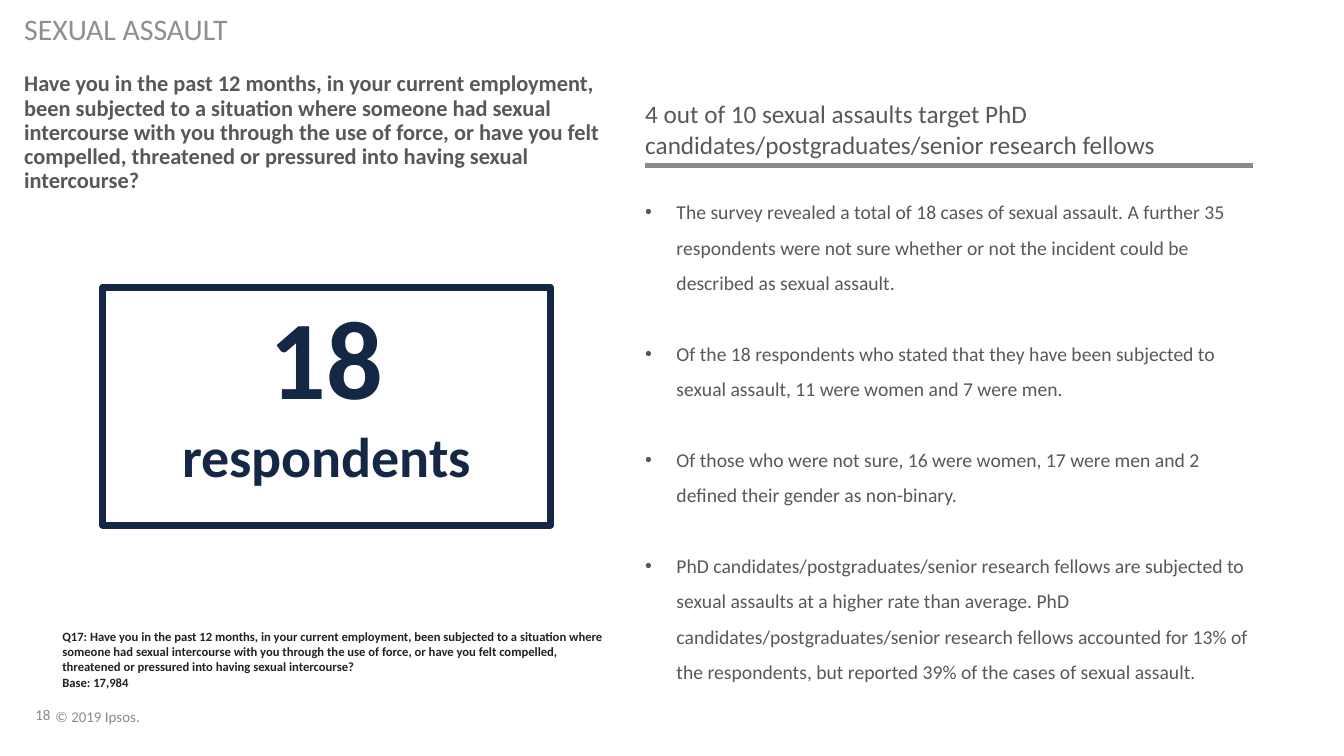
"""Build the survey slide on reported cases of sexual assault."""
from dataclasses import dataclass

import lxml.etree
import pptx
import pptx.dml.color
import pptx.enum.shapes
import pptx.enum.text
import pptx.oxml.ns
import pptx.util

Inches = pptx.util.Inches
Pt = pptx.util.Pt
ALIGN = pptx.enum.text.PP_ALIGN
ANCHOR = pptx.enum.text.MSO_ANCHOR
qn = pptx.oxml.ns.qn


@dataclass(frozen=True)
class Theme:
    """Font, colours and type sizes of the slide."""
    font: str = "Calibri"
    grey: str = "888B8D"
    section: str = "8F8F92"
    text: str = "58585B"
    note: str = "222223"
    navy: str = "142846"
    footer_pt: float = 10.7
    section_pt: float = 21.3
    question_pt: float = 16
    note_pt: float = 9
    heading_pt: float = 18
    bullet_pt: float = 14
    count_pt: float = 80
    unit_pt: float = 40
    rule_pt: float = 3.5
    frame_pt: float = 5


THEME = Theme()


@dataclass(frozen=True)
class Para:
    """One paragraph and its formatting."""
    text: str
    size: float
    color: str = THEME.text
    bold: bool = False
    spacing: float = 1.0
    before: float = 0
    align: ALIGN = ALIGN.LEFT
    bullet: bool = False


@dataclass(frozen=True)
class Block:
    """A text box with its place, in inches, and its paragraphs."""
    box: tuple[float, float, float, float]
    paras: list[Para]
    anchor: ANCHOR = ANCHOR.TOP
    inset: tuple[float, float] = (0, 0)


QUESTION = (
    "Have you in the past 12 months, in your current employment, been subjected "
    "to a situation where someone had sexual intercourse with you through the use "
    "of force, or have you felt compelled, threatened or pressured into having "
    "sexual intercourse?"
)
FINDINGS = [
    "The survey revealed a total of 18 cases of sexual assault. A further 35 "
    "respondents were not sure whether or not the incident could be described as "
    "sexual assault.",
    "Of the 18 respondents who stated that they have been subjected to sexual "
    "assault, 11 were women and 7 were men.",
    "Of those who were not sure, 16 were women, 17 were men and 2 defined their "
    "gender as non-binary.",
    "PhD candidates/postgraduates/senior research fellows are subjected to sexual "
    "assaults at a higher rate than average. PhD candidates/postgraduates/senior "
    "research fellows accounted for 13% of the respondents, but reported 39% of "
    "the cases of sexual assault.",
]
HEADING = (
    "4 out of 10 sexual assaults target PhD "
    "candidates/postgraduates/senior research fellows"
)
BLOCKS = [
    Block((0.35, 6.83, 0.45, 0.35),
          [Para("18", THEME.footer_pt, THEME.grey, spacing=0.85)], ANCHOR.BOTTOM),
    Block((0.55, 6.95, 1.01, 0.25),
          [Para("© 2019 Ipsos.", THEME.footer_pt, THEME.grey, spacing=0.85)],
          ANCHOR.BOTTOM),
    Block((0.24, 0.07, 9.81, 0.47),
          [Para("SEXUAL ASSAULT", THEME.section_pt, THEME.section, spacing=0.9)],
          ANCHOR.MIDDLE),
    Block((0.24, 0.72, 5.87, 0.97),
          [Para(QUESTION, THEME.question_pt, bold=True, spacing=0.9)]),
    Block((0.52, 6.19, 5.6, 0.71),
          [Para(t, THEME.note_pt, THEME.note, bold=True)
           for t in (f"Q17: {QUESTION}", "Base: 17,984")], inset=(0.1, 0.05)),
    Block((6.4, 1.87, 6.04, 4.32),
          [Para(t, THEME.bullet_pt, spacing=1.5, before=25.4 if i else 0, bullet=True)
           for i, t in enumerate(FINDINGS)]),
    Block((6.4, 0.98, 5.66, 0.79), [Para(HEADING, THEME.heading_pt)]),
]
COUNT = Block((1.02, 2.85, 4.44, 2.36), [
    Para(t, size, THEME.navy, bold=True, align=ALIGN.CENTER)
    for t, size in (("18", THEME.count_pt), ("respondents", THEME.unit_pt))
])


def rgb(color: str) -> pptx.dml.color.RGBColor:
    """Turn a hex string into a colour."""
    return pptx.dml.color.RGBColor.from_string(color)


def add_bullet(p) -> None:
    """Give a paragraph a round bullet with a hanging indent."""
    pPr = p._p.get_or_add_pPr()
    pPr.set("marL", str(Inches(0.31)))
    pPr.set("indent", str(-Inches(0.31)))
    lxml.etree.SubElement(pPr, qn("a:buFont")).set("typeface", "Arial")
    lxml.etree.SubElement(pPr, qn("a:buChar")).set("char", "•")


def fill_text(tf, block: Block) -> None:
    """Write the paragraphs of a block into a text frame."""
    tf.word_wrap = True
    tf.vertical_anchor = block.anchor
    tf.margin_left = tf.margin_right = Inches(block.inset[0])
    tf.margin_top = tf.margin_bottom = Inches(block.inset[1])
    for i, para in enumerate(block.paras):
        p = tf.add_paragraph() if i else tf.paragraphs[0]
        if para.bullet:
            add_bullet(p)
        p.alignment = para.align
        p.line_spacing = para.spacing
        if para.before:
            p.space_before = Pt(para.before)
        r = p.add_run()
        r.text = para.text
        r.font.name = THEME.font
        r.font.size = Pt(para.size)
        r.font.bold = para.bold
        r.font.color.rgb = rgb(para.color)


def add_text(s, block: Block) -> None:
    """Add a text box for a block."""
    sp = s.shapes.add_textbox(*map(Inches, block.box))
    fill_text(sp.text_frame, block)


def add_rule(s) -> None:
    """Add the line under the heading."""
    sp = s.shapes.add_connector(
        pptx.enum.shapes.MSO_CONNECTOR.STRAIGHT,
        Inches(6.4), Inches(1.64), Inches(12.43), Inches(1.64))
    sp.line.color.rgb = rgb(THEME.grey)
    sp.line.width = Pt(THEME.rule_pt)
    lxml.etree.SubElement(sp._element.spPr, qn("a:effectLst"))


def add_count(s) -> None:
    """Add the framed number of respondents."""
    sp = s.shapes.add_shape(
        pptx.enum.shapes.MSO_SHAPE.RECTANGLE, *map(Inches, COUNT.box))
    sp.shadow.inherit = False
    sp.fill.background()
    sp.line.color.rgb = rgb(THEME.navy)
    sp.line.width = Pt(THEME.frame_pt)
    lxml.etree.SubElement(sp.line._get_or_add_ln(), qn("a:round"))
    fill_text(sp.text_frame, COUNT)


def main() -> None:
    """Build and save the slide."""
    prs = pptx.Presentation()
    prs.slide_width, prs.slide_height = Inches(13.33), Inches(7.5)
    s = prs.slides.add_slide(prs.slide_layouts[6])
    for block in BLOCKS:
        add_text(s, block)
    add_rule(s)
    add_count(s)
    prs.save("out.pptx")


if __name__ == "__main__":
    main()
